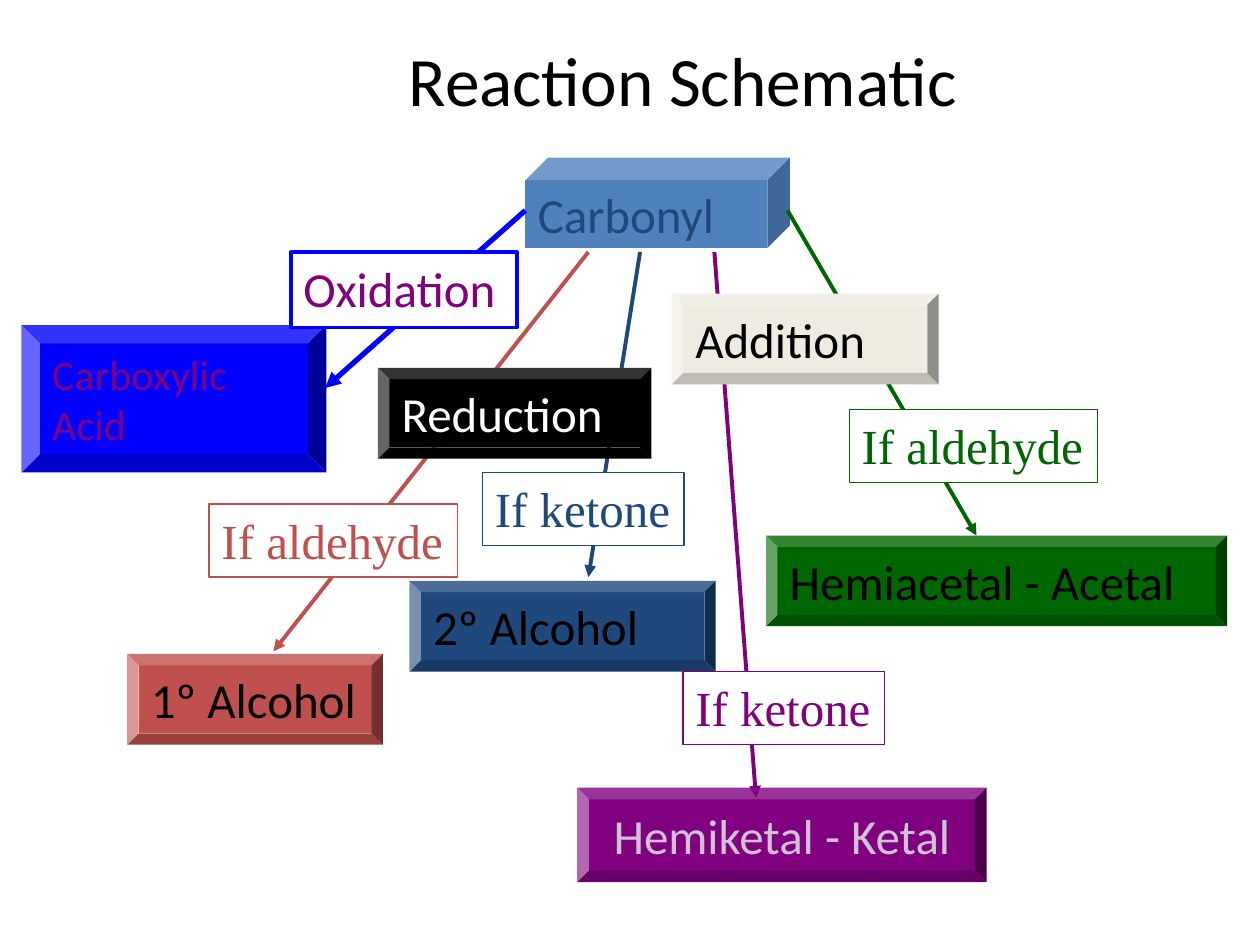
from lxml.etree import SubElement
from pptx import Presentation
from pptx.dml.color import RGBColor
from pptx.enum.shapes import MSO_CONNECTOR, MSO_SHAPE as SHAPE
from pptx.enum.text import MSO_ANCHOR as ANCHOR, MSO_AUTO_SIZE as FIT, PP_ALIGN as ALIGN
from pptx.oxml.ns import qn
from pptx.util import Inches, Pt

COLORS = {
    "black": "000000", "white": "FFFFFF", "blue": "0000FF", "sky": "4F81BD",
    "navy": "1F497D", "red": "C0504D", "green": "006600", "purple": "800080",
    "lilac": "D0C1D5", "cream": "EEECE1",
}
SANS, SERIF = "Calibri", "Times New Roman"


def rgb(name):
    return RGBColor.from_string(COLORS[name])


def write(shape, text, color, size=28, font=SANS, anchor=ANCHOR.MIDDLE,
          align=ALIGN.LEFT, wrap=True, fit=FIT.SHAPE_TO_FIT_TEXT):
    frame = shape.text_frame
    frame.text = text
    frame.word_wrap = wrap
    frame.auto_size = fit
    frame.vertical_anchor = anchor
    for paragraph in frame.paragraphs:
        paragraph.alignment = align
        for run in paragraph.runs:
            run.font.size = Pt(size)
            run.font.name = font
            run.font.color.rgb = rgb(color)


def add_title(slide, box, text):
    title = slide.shapes.add_textbox(*map(Inches, box))
    write(title, text, "black", size=39.6, align=ALIGN.CENTER, fit=FIT.NONE)


def add_block(slide, box, text, fill, color, kind=SHAPE.BEVEL, **style):
    """Place a solid block for a compound or a reaction type."""
    block = slide.shapes.add_shape(kind, *map(Inches, box))
    block.shadow.inherit = False
    block.fill.solid()
    block.fill.fore_color.rgb = rgb(fill)
    block.line.fill.background()
    write(block, text, color, **style)
    return block


def add_label(slide, box, text, outline, color, weight=0.75, font=SERIF):
    """Place a white outlined label that sits on an arrow."""
    label = add_block(slide, box, text, "white", color, SHAPE.RECTANGLE,
                      font=font, anchor=ANCHOR.TOP, wrap=False)
    label.line.color.rgb = rgb(outline)
    label.line.width = Pt(weight)


def add_arrow(slide, start, end, color, weight=2.25):
    arrow = slide.shapes.add_connector(MSO_CONNECTOR.STRAIGHT,
                                       *map(Inches, (*start, *end)))
    arrow.line.color.rgb = rgb(color)
    arrow.line.width = Pt(weight)
    SubElement(arrow.line._get_or_add_ln(), qn("a:tailEnd"), type="triangle")
    SubElement(arrow._element.spPr, qn("a:effectLst"))


def add_starting_compound(slide):
    add_block(slide, (4.17, 1.25, 2.1, 0.72), "Carbonyl", "sky", "navy", SHAPE.CUBE)
    for start, end, color in (
        ((4.67, 2), (2.17, 5.17), "red"),
        ((5.08, 2), (4.67, 4.58), "navy"),
        ((5.67, 2), (6, 6.33), "purple"),
        ((6.25, 1.67), (7.75, 4.25), "green"),
    ):
        add_arrow(slide, start, end, color)


def add_ketal(slide, box):
    ketal = add_block(slide, box, "Hemiketal - Ketal", "purple", "lilac",
                      anchor=ANCHOR.TOP, align=ALIGN.CENTER, fit=FIT.NONE)
    properties = ketal.text_frame.paragraphs[0]._p.get_or_add_pPr()
    properties.set("marL", str(Inches(0.38)))
    properties.set("indent", str(Inches(-0.38)))


def add_products(slide):
    add_block(slide, (1.01, 5.19, 2.03, 0.72), "1º Alcohol", "red", "black", wrap=False)
    add_block(slide, (3.25, 4.61, 2.43, 0.72), "2º Alcohol", "navy", "black")
    add_block(slide, (6.08, 4.25, 3.66, 0.72), "Hemiacetal - Acetal", "green", "black")


def add_conditions(slide):
    widths = {"If aldehyde": 1.97, "If ketone": 1.6}
    for left, top, text, color in (
        (1.66, 4, "If aldehyde", "red"),
        (3.83, 3.75, "If ketone", "navy"),
        (5.42, 5.33, "If ketone", "purple"),
        (6.74, 3.25, "If aldehyde", "green"),
    ):
        add_label(slide, (left, top, widths[text], 0.58), text, color, color)


def add_oxidation(slide):
    add_block(slide, (0.17, 2.58, 2.42, 1.17), "Carboxylic\nAcid", "blue", "purple", size=24)
    add_arrow(slide, (4.17, 1.67), (2.58, 3.08), "blue", weight=3)
    add_label(slide, (2.31, 2, 1.79, 0.6), "Oxidation", "blue", "purple",
              weight=2.25, font=SANS)


def add_reaction_types(slide):
    add_block(slide, (3, 2.92, 2.17, 0.72), "Reduction", "black", "white")
    add_block(slide, (5.33, 2.33, 2.12, 0.72), "Addition", "cream", "black")


def main():
    deck = Presentation()
    deck.slide_width, deck.slide_height = Inches(10), Inches(7.5)
    slide = deck.slides.add_slide(deck.slide_layouts[6])
    add_title(slide, (1.17, 0.25, 8.5, 0.75), "Reaction Schematic")
    add_ketal(slide, (4.58, 6.25, 3.25, 0.75))
    add_starting_compound(slide)
    add_products(slide)
    add_conditions(slide)
    add_oxidation(slide)
    add_reaction_types(slide)
    deck.save("out.pptx")


if __name__ == "__main__":
    main()
